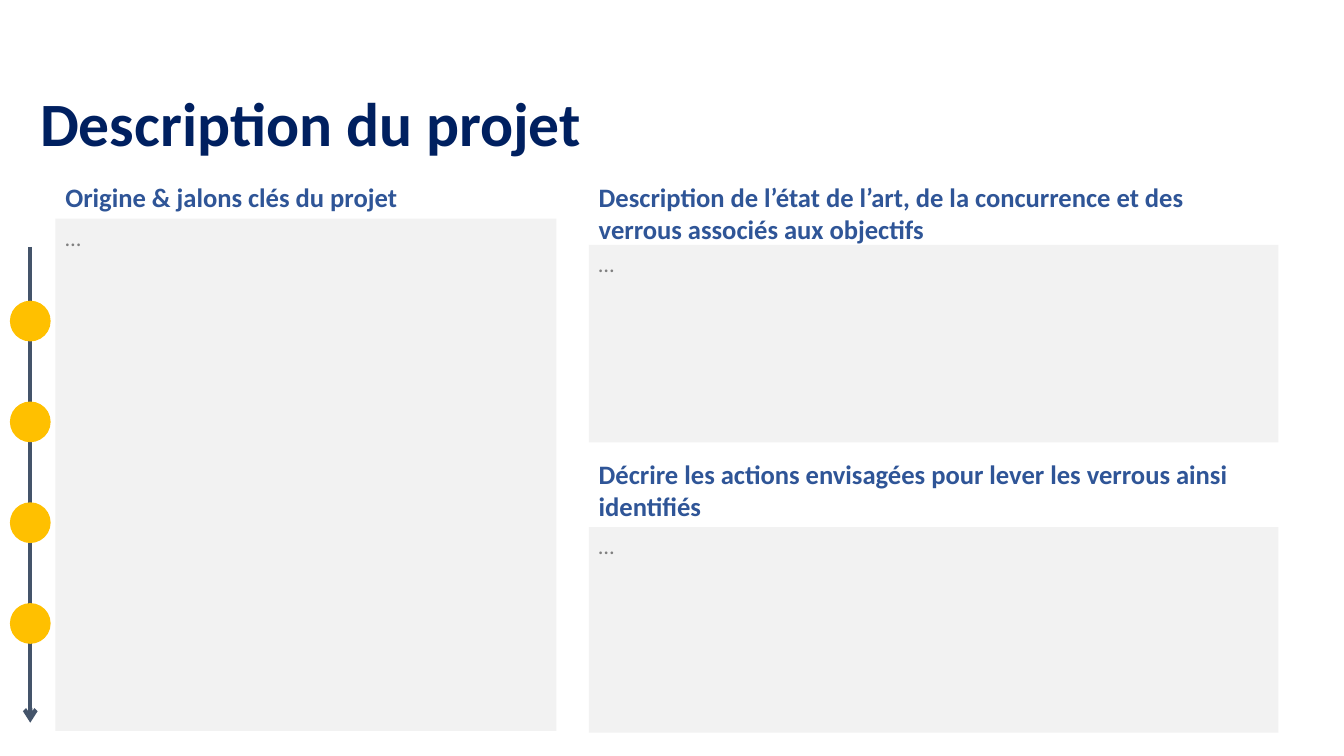
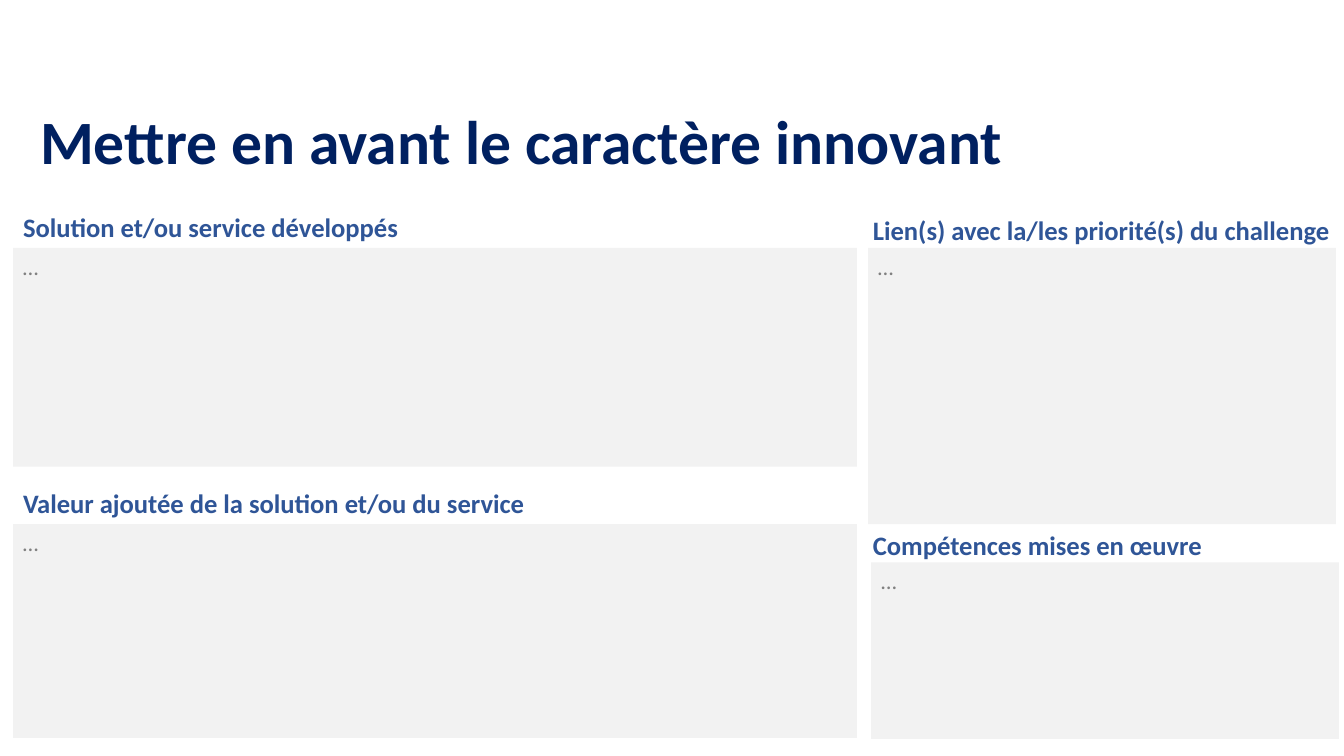
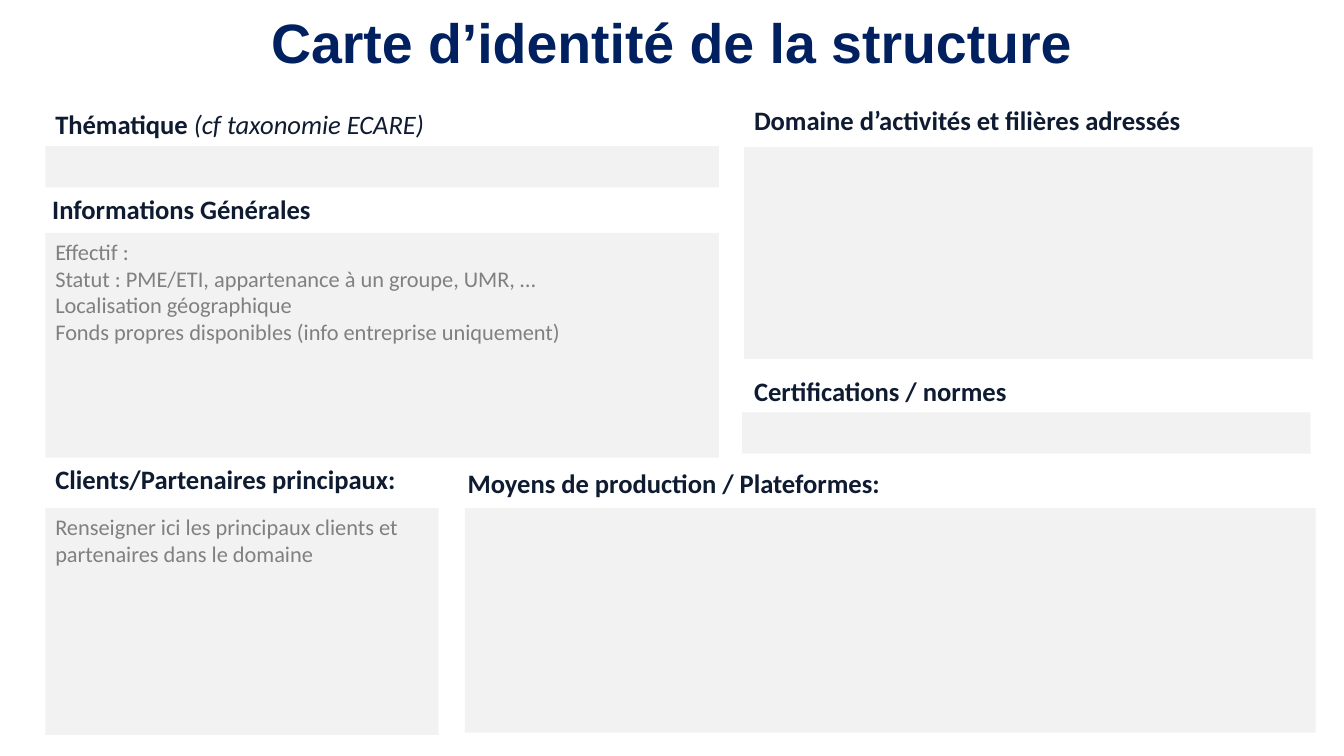
from dataclasses import dataclass

from lxml import etree
from pptx import Presentation
from pptx import util as u
from pptx.dml import color
from pptx.enum import shapes, text
from pptx.oxml import ns


@dataclass(frozen=True)
class Theme:
    title_color: str = "002060"
    heading_blue: str = "2F5597"
    heading_dark: str = "0E1B31"
    body_color: str = "808080"
    panel_fill: str = "F2F2F2"
    timeline_color: str = "44546A"
    milestone_color: str = "FFC000"
    font: str = "Calibri"
    title_size: float = 44
    heading_size: float = 19
    body_size: float = 16
    timeline_width: float = 3


THEME = Theme()


@dataclass(frozen=True)
class Box:
    left: float
    top: float
    width: float
    height: float

    def lengths(self) -> tuple:
        return tuple(u.Inches(v) for v in (self.left, self.top, self.width, self.height))


@dataclass(frozen=True)
class Panel:
    """A heading above a grey field to fill in."""
    heading: str
    heading_box: Box
    field: Box
    body: str = "…"
    note: str = ""
    justified: bool = True


@dataclass(frozen=True)
class Page:
    title: str
    title_box: Box
    panels: tuple[Panel, ...]
    title_font: str = THEME.font
    title_size: float = THEME.title_size
    heading_color: str = THEME.heading_blue
    has_timeline: bool = False


# Content of the pages
PAGES = (
    Page(
        "Description du projet", Box(0.3, 0.86, 9.53, 0.8),
        (
            Panel("Origine & jalons clés du projet",
                  Box(0.55, 1.75, 4.97, 0.42), Box(0.55, 2.17, 4.97, 5.08)),
            Panel("Description de l’état de l’art, de la concurrence et des verrous associés aux objectifs",
                  Box(5.84, 1.75, 6.84, 0.74), Box(5.84, 2.43, 6.84, 1.96)),
            Panel("Décrire les actions envisagées pour lever les verrous ainsi identifiés",
                  Box(5.84, 4.49, 6.84, 0.74), Box(5.84, 5.23, 6.84, 2.04)),
        ),
        has_timeline=True,
    ),
    Page(
        "Mettre en avant le caractère innovant", Box(0.3, 1.01, 11.24, 0.85),
        (
            Panel("Solution et/ou service développés",
                  Box(0.13, 2.04, 6.08, 0.42), Box(0.13, 2.46, 8.37, 2.17)),
            Panel("Valeur ajoutée de la solution et/ou du service",
                  Box(0.13, 4.78, 6.39, 0.42), Box(0.13, 5.2, 8.37, 2.12)),
            Panel("Lien(s) avec la/les priorité(s) du challenge",
                  Box(8.56, 2.07, 4.8, 0.42), Box(8.61, 2.46, 4.64, 2.74)),
            Panel("Compétences mises en œuvre",
                  Box(8.56, 5.2, 4.8, 0.42), Box(8.64, 5.58, 4.64, 1.75)),
        ),
    ),
    Page(
        "Carte d’identité de la structure", Box(2.59, 0.09, 10.6, 0.73),
        (
            Panel("Thématique ", Box(0.45, 1.02, 6.07, 0.42), Box(0.45, 1.45, 6.68, 0.41),
                  body="", note="(cf taxonomie ECARE)"),
            Panel("Informations Générales", Box(0.42, 1.86, 5.86, 0.41), Box(0.45, 2.31, 6.68, 2.23),
                  body="Effectif :\n"
                       "Statut : PME/ETI, appartenance à un groupe, UMR, …\n"
                       "Localisation géographique\n"
                       "Fonds propres disponibles (info entreprise uniquement)"),
            Panel("Clients/Partenaires principaux:", Box(0.45, 4.54, 4.24, 0.73), Box(0.45, 5.04, 3.9, 2.25),
                  body="Renseigner ici les principaux clients et partenaires dans le domaine",
                  justified=False),
            Panel("Moyens de production / Plateformes:",
                  Box(4.54, 4.58, 5.44, 0.73), Box(4.61, 5.04, 8.44, 2.23), body=""),
            Panel("Domaine d’activités et filières adressés",
                  Box(7.38, 0.98, 5.49, 0.42), Box(7.38, 1.46, 5.64, 2.1), body=""),
            Panel("Certifications / normes",
                  Box(7.38, 3.67, 5.48, 0.42), Box(7.36, 4.09, 5.64, 0.41), body=""),
        ),
        title_font="Arial", title_size=39.6, heading_color=THEME.heading_dark,
    ),
)


# Drawing helpers
def rgb(value: str) -> color.RGBColor:
    return color.RGBColor.from_string(value)


def format_run(run, size: float, hex_color: str, font: str = THEME.font,
               bold: bool = False, italic: bool = False) -> None:
    run.font.name = font
    run.font.size = u.Pt(size)
    run.font.color.rgb = rgb(hex_color)
    run.font.bold = bold
    run.font.italic = italic


def add_label(slide, box: Box, label: str, size: float, hex_color: str, font: str = THEME.font):
    """Add a bold one-paragraph text box and return its paragraph."""
    text_frame = slide.shapes.add_textbox(*box.lengths()).text_frame
    text_frame.word_wrap = True
    text_frame.text = label
    paragraph = text_frame.paragraphs[0]
    format_run(paragraph.runs[0], size, hex_color, font, bold=True)
    return paragraph


def add_filled_shape(slide, kind, box: Box, fill: str):
    shape = slide.shapes.add_shape(kind, *box.lengths())
    shape.shadow.inherit = False
    shape.fill.solid()
    shape.fill.fore_color.rgb = rgb(fill)
    shape.line.fill.background()
    return shape


def add_title(slide, page: Page) -> None:
    paragraph = add_label(slide, page.title_box, page.title, page.title_size,
                          THEME.title_color, page.title_font)
    paragraph.line_spacing = 0.9
    slide.shapes[-1].text_frame.vertical_anchor = text.MSO_ANCHOR.MIDDLE


def add_panel(slide, panel: Panel, heading_color: str) -> None:
    field = add_filled_shape(slide, shapes.MSO_SHAPE.RECTANGLE, panel.field, THEME.panel_fill)
    if panel.body:
        text_frame = field.text_frame
        text_frame.word_wrap = True
        text_frame.vertical_anchor = text.MSO_ANCHOR.TOP
        text_frame.text = panel.body
        for paragraph in text_frame.paragraphs:
            paragraph.alignment = text.PP_ALIGN.JUSTIFY if panel.justified else text.PP_ALIGN.LEFT
            format_run(paragraph.runs[0], THEME.body_size, THEME.body_color)

    heading = add_label(slide, panel.heading_box, panel.heading, THEME.heading_size, heading_color)
    if panel.note:
        note = heading.add_run()
        note.text = panel.note
        format_run(note, THEME.heading_size, heading_color, italic=True)


def add_timeline(slide) -> None:
    """Draw a downward arrow with evenly spaced milestones."""
    axis, start, end = 0.3, 2.45, 7.17
    arrow = slide.shapes.add_connector(
        shapes.MSO_CONNECTOR.STRAIGHT,
        u.Inches(axis), u.Inches(start), u.Inches(axis), u.Inches(end))
    arrow.line.color.rgb = rgb(THEME.timeline_color)
    arrow.line.width = u.Pt(THEME.timeline_width)
    etree.SubElement(arrow.line._get_or_add_ln(), ns.qn("a:tailEnd"), type="arrow")
    etree.SubElement(arrow._element.spPr, ns.qn("a:effectLst"))

    diameter, first_top, step = 0.39, 2.99, 1.0
    for index in range(4):
        box = Box(axis - diameter / 2, first_top + index * step, diameter, diameter)
        milestone = add_filled_shape(slide, shapes.MSO_SHAPE.OVAL, box, THEME.milestone_color)
        milestone.line.color.rgb = rgb(THEME.milestone_color)
        milestone.line.width = u.Pt(1)


def add_page(presentation, page: Page) -> None:
    slide = presentation.slides.add_slide(presentation.slide_layouts[6])
    for panel in page.panels:
        add_panel(slide, panel, page.heading_color)
    add_title(slide, page)
    if page.has_timeline:
        add_timeline(slide)


def main() -> None:
    presentation = Presentation()
    presentation.slide_width = u.Inches(13.33)
    presentation.slide_height = u.Inches(7.5)
    for page in PAGES:
        add_page(presentation, page)
    presentation.save("out.pptx")


if __name__ == "__main__":
    main()
